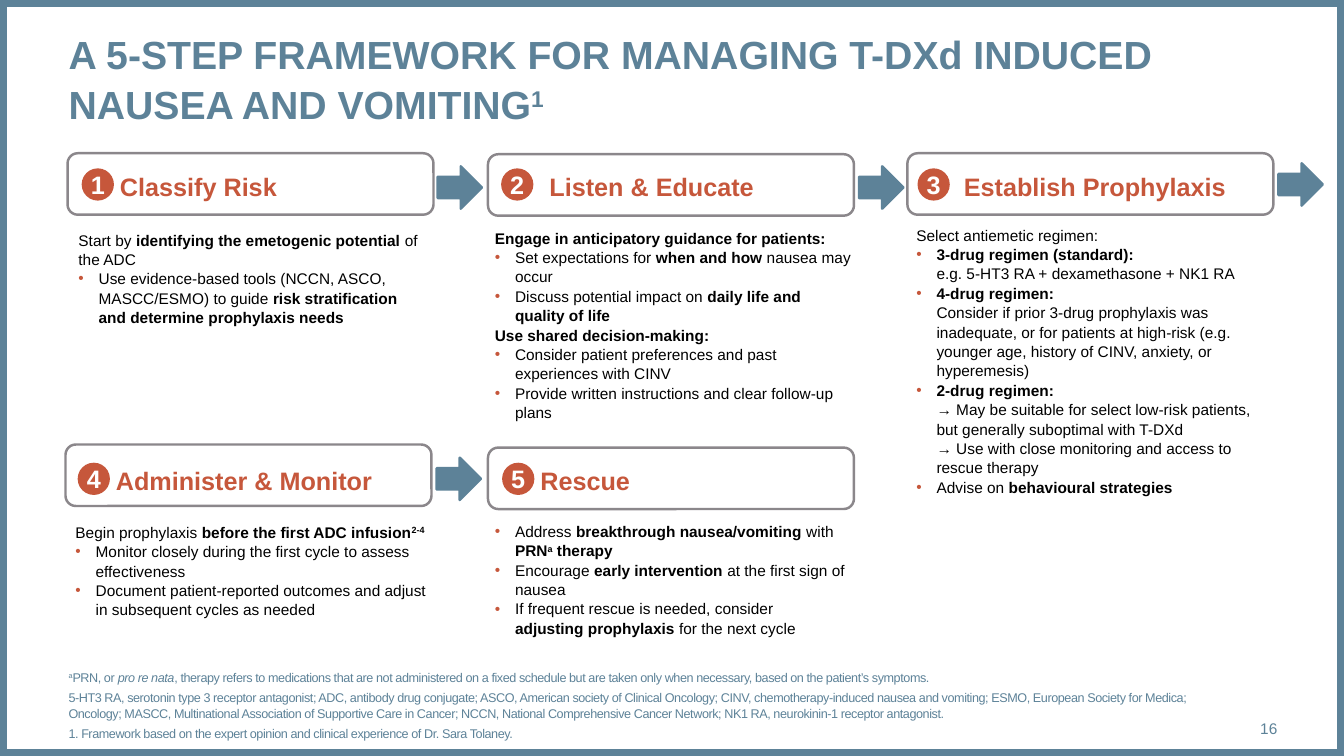
"""Build the five-step slide on managing T-DXd induced nausea and vomiting."""
from dataclasses import dataclass

from lxml.etree import SubElement
from pptx import Presentation
from pptx.dml.color import RGBColor
from pptx.enum.shapes import MSO_AUTO_SHAPE_TYPE as Preset
from pptx.enum.text import MSO_VERTICAL_ANCHOR as Anchor, PP_PARAGRAPH_ALIGNMENT as Align
from pptx.oxml.ns import qn
from pptx.util import Inches, Pt

BLUE, RUST, GREY = "5D8298", "C6573B", "8B878B"
BLACK, WHITE = "000000", "FFFFFF"
BULLET = "• "


@dataclass(frozen=True)
class Style:
    size: float
    color: str
    bold: bool = False
    align: Align = Align.LEFT
    anchor: Anchor = Anchor.TOP
    spacing: float = 1.05
    before: float = 0
    tracking: float = 0
    inset: tuple = (0, 0, 0, 0)


@dataclass(frozen=True)
class Step:
    title: str
    frame: tuple
    badge: tuple
    title_left: float
    body_at: tuple
    lines: tuple
    arrow: tuple = ()


TITLE = Style(28, BLUE, bold=True)
HEADING = Style(18, RUST, bold=True, inset=(0, 0.01, 0, 0))
BADGE = Style(18, WHITE, bold=True, align=Align.CENTER, anchor=Anchor.MIDDLE, spacing=1)
BODY = Style(11, BLACK, inset=(0.1, 0.05, 0.1, 0.05))
NOTE = Style(9, BLUE, anchor=Anchor.BOTTOM, before=3, tracking=-0.3)
NUMBER = Style(11, BLUE, align=Align.RIGHT, anchor=Anchor.MIDDLE, spacing=1)

STEPS = (
    Step("Classify Risk", (0.67, 1.52), (0.81, 1.67), 1.19, (0.68, 2.23, 3.62, 1.03), (
        "Start by *identifying the emetogenic potential* of the ADC",
        "• Use evidence-based tools (NCCN, ASCO, MASCC/ESMO) to guide"
        "* risk stratification and determine prophylaxis needs*",
    ), (4.34, 1.65)),
    Step("Listen & Educate", (4.84, 1.53), (4.97, 1.67), 5.45, (4.81, 2.21, 3.77, 1.95), (
        "*Engage in anticipatory guidance for patients:*",
        "• Set expectations for *when and how* nausea may occur",
        "• Discuss potential impact on *daily life and quality of life*",
        "*Use shared decision-making:*",
        "• Consider patient preferences and past experiences with CINV",
        "• Provide written instructions and clear follow-up plans",
    ), (8.52, 1.65)),
    Step("Establish Prophylaxis", (9, 1.52), (9.1, 1.67), 9.56, (8.99, 2.18, 3.61, 2.69), (
        "Select antiemetic regimen:",
        "• *3-drug regimen (standard):*\ne.g. 5-HT3 RA + dexamethasone + NK1 RA",
        "• *4-drug regimen:*\nConsider if prior 3-drug prophylaxis was inadequate, or for "
        "patients at high-risk (e.g. younger age, history of CINV, anxiety, or hyperemesis)",
        "• *2-drug regimen:*\n→ May be suitable for select low-risk patients, but generally "
        "suboptimal with T-DXd\n→ Use with close monitoring and access to rescue therapy",
        "• Advise on *behavioural strategies*",
    ), (12.68, 1.62)),
    Step("Administer & Monitor", (0.65, 4.41), (0.77, 4.59), 1.15, (0.65, 5.13, 3.69, 1.03), (
        "Begin prophylaxis *before the first ADC infusion^2-4^*",
        "• Monitor closely during the first cycle to assess effectiveness",
        "• Document patient-reported outcomes and adjust in subsequent cycles as needed",
    ), (4.33, 4.54)),
    Step("Rescue", (4.84, 4.44), (4.98, 4.59), 5.36, (4.81, 5.12, 3.68, 1.21), (
        "• Address *breakthrough nausea/vomiting* with *PRN^a^ therapy*",
        "• Encourage *early intervention* at the first sign of nausea",
        "• If frequent rescue is needed, consider *adjusting prophylaxis* for the next cycle",
    )),
)

NOTES = (
    "^a^PRN, or _pro re nata_, therapy refers to medications that are not administered on a fixed "
    "schedule but are taken only when necessary, based on the patient’s symptoms.",
    "5-HT3 RA, serotonin type 3 receptor antagonist; ADC, antibody drug conjugate; ASCO, American "
    "society of Clinical Oncology; CINV, chemotherapy-induced nausea and vomiting; ESMO, European "
    "Society for Medica; Oncology; MASCC, Multinational Association of Supportive Care in Cancer; "
    "NCCN, National Comprehensive Cancer Network; NK1 RA, neurokinin-1 receptor antagonist.",
    "1. Framework based on the expert opinion and clinical experience of Dr. Sara Tolaney.",
)


def rgb(color: str) -> RGBColor:
    return RGBColor.from_string(color)


def add_span(para, text: str, style: Style, marks: set) -> None:
    span = para.add_run()
    span.text = text
    font = span.font
    font.name, font.size = "Arial", Pt(style.size)
    font.bold = style.bold or "*" in marks
    font.italic = "_" in marks
    font.color.rgb = rgb(style.color)
    properties = span._r.get_or_add_rPr()
    if "^" in marks:
        properties.set("baseline", "30000")
    if style.tracking:
        properties.set("spc", str(round(style.tracking * 100)))


def add_marked_text(para, text: str, style: Style) -> None:
    marks, pending = set(), ""
    for letter in text:
        if letter not in "*^_\n":
            pending += letter
            continue
        if pending:
            add_span(para, pending, style, marks)
            pending = ""
        if letter == "\n":
            para.add_line_break()
        else:
            marks ^= {letter}
    if pending:
        add_span(para, pending, style, marks)


def add_bullet(para) -> None:
    properties = para._p.get_or_add_pPr()
    properties.set("marL", str(Inches(0.2)))
    properties.set("indent", str(Inches(-0.2)))
    color = SubElement(properties, qn("a:buClr"))
    SubElement(color, qn("a:srgbClr"), val=RUST)
    SubElement(properties, qn("a:buFont"), typeface="Arial")
    SubElement(properties, qn("a:buChar"), char=BULLET.strip())


def write(box, lines: tuple, style: Style) -> None:
    frame = box.text_frame
    frame.word_wrap = True
    frame.vertical_anchor = style.anchor
    (frame.margin_left, frame.margin_top,
     frame.margin_right, frame.margin_bottom) = map(Inches, style.inset)
    for index, line in enumerate(lines):
        para = frame.add_paragraph() if index else frame.paragraphs[0]
        para.alignment = style.align
        para.line_spacing = style.spacing
        para.space_before = Pt(style.before)
        if line.startswith(BULLET):
            add_bullet(para)
        add_marked_text(para, line.removeprefix(BULLET), style)


def add_text(page, at: tuple, lines: tuple, style: Style) -> None:
    write(page.shapes.add_textbox(*map(Inches, at)), lines, style)


def add_preset(page, preset: Preset, at: tuple, fill: str = "", line: str = "",
               width: float = 1.75):
    shape = page.shapes.add_shape(preset, *map(Inches, at))
    shape.shadow.inherit = False
    if fill:
        shape.fill.solid()
        shape.fill.fore_color.rgb = rgb(fill)
    else:
        shape.fill.background()
    if line:
        shape.line.color.rgb = rgb(line)
        shape.line.width = Pt(width)
    else:
        shape.line.fill.background()
    return shape


def add_step(page, number: int, step: Step) -> None:
    add_text(page, step.body_at, step.lines, BODY)
    add_text(page, (step.title_left, step.badge[1], 3.1, 0.32), (step.title,), HEADING)
    badge = add_preset(page, Preset.OVAL, (*step.badge, 0.32, 0.32), fill=RUST)
    write(badge, (str(number),), BADGE)
    add_preset(page, Preset.ROUNDED_RECTANGLE, (*step.frame, 3.63, 0.61), line=GREY)
    if step.arrow:
        add_preset(page, Preset.RIGHT_ARROW, (*step.arrow, 0.44, 0.42), fill=BLUE, line=BLUE)


def main() -> None:
    deck = Presentation()
    deck.slide_width, deck.slide_height = Inches(13.33), Inches(7.5)
    page = deck.slides.add_slide(deck.slide_layouts[6])
    add_preset(page, Preset.RECTANGLE, (0, 0, 13.33, 7.5), line=BLUE, width=10)
    add_text(page, (0.68, 0.28, 11.99, 0.94), (
        "A 5-STEP FRAMEWORK FOR MANAGING T-DXd INDUCED NAUSEA AND VOMITING^1^",), TITLE)
    for number, step in enumerate(STEPS, start=1):
        add_step(page, number, step)
    add_text(page, (0.68, 6.51, 11.5, 0.84), NOTES, NOTE)
    add_text(page, (11.81, 7.03, 0.86, 0.4), ("16",), NUMBER)
    deck.save("out.pptx")


if __name__ == "__main__":
    main()
